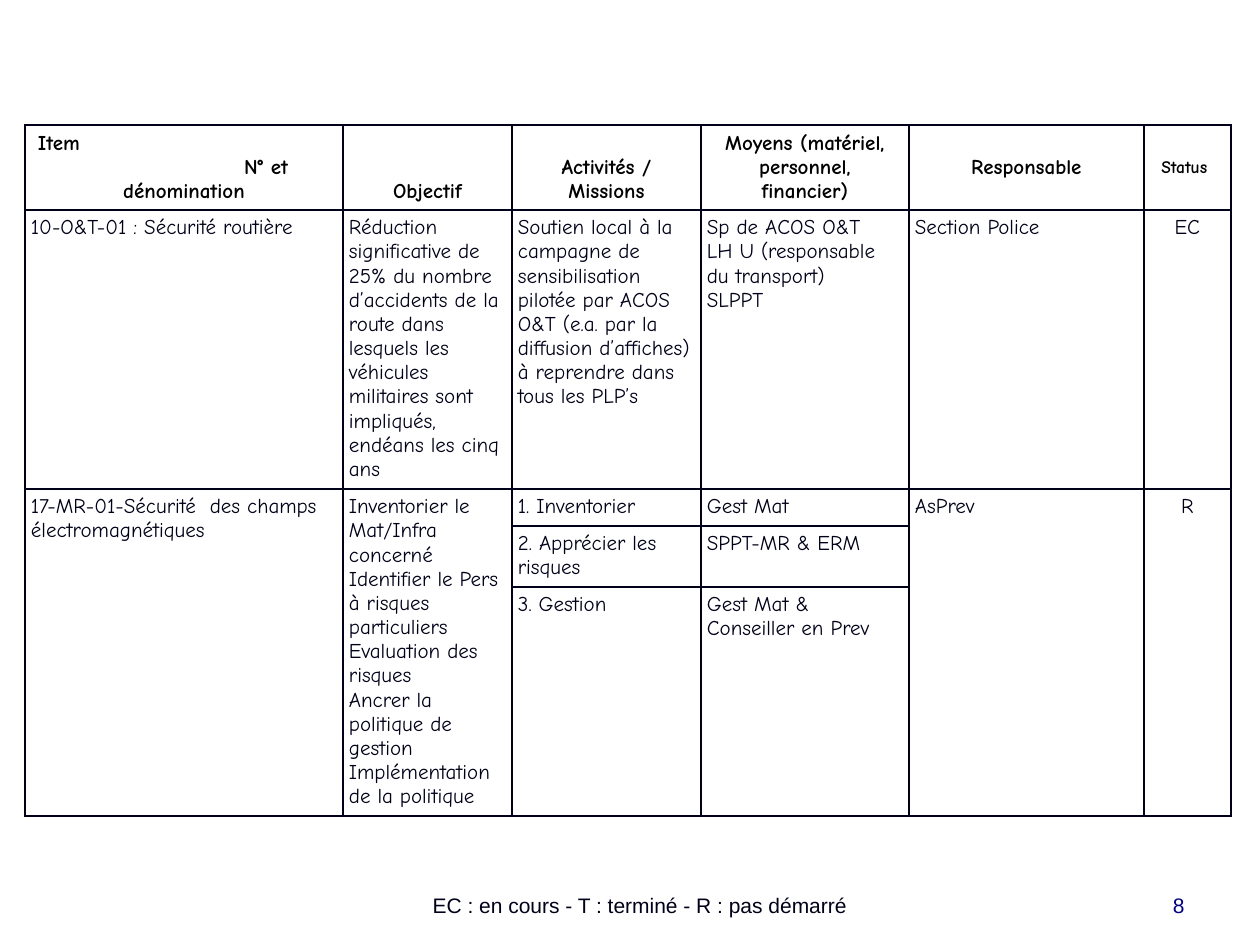
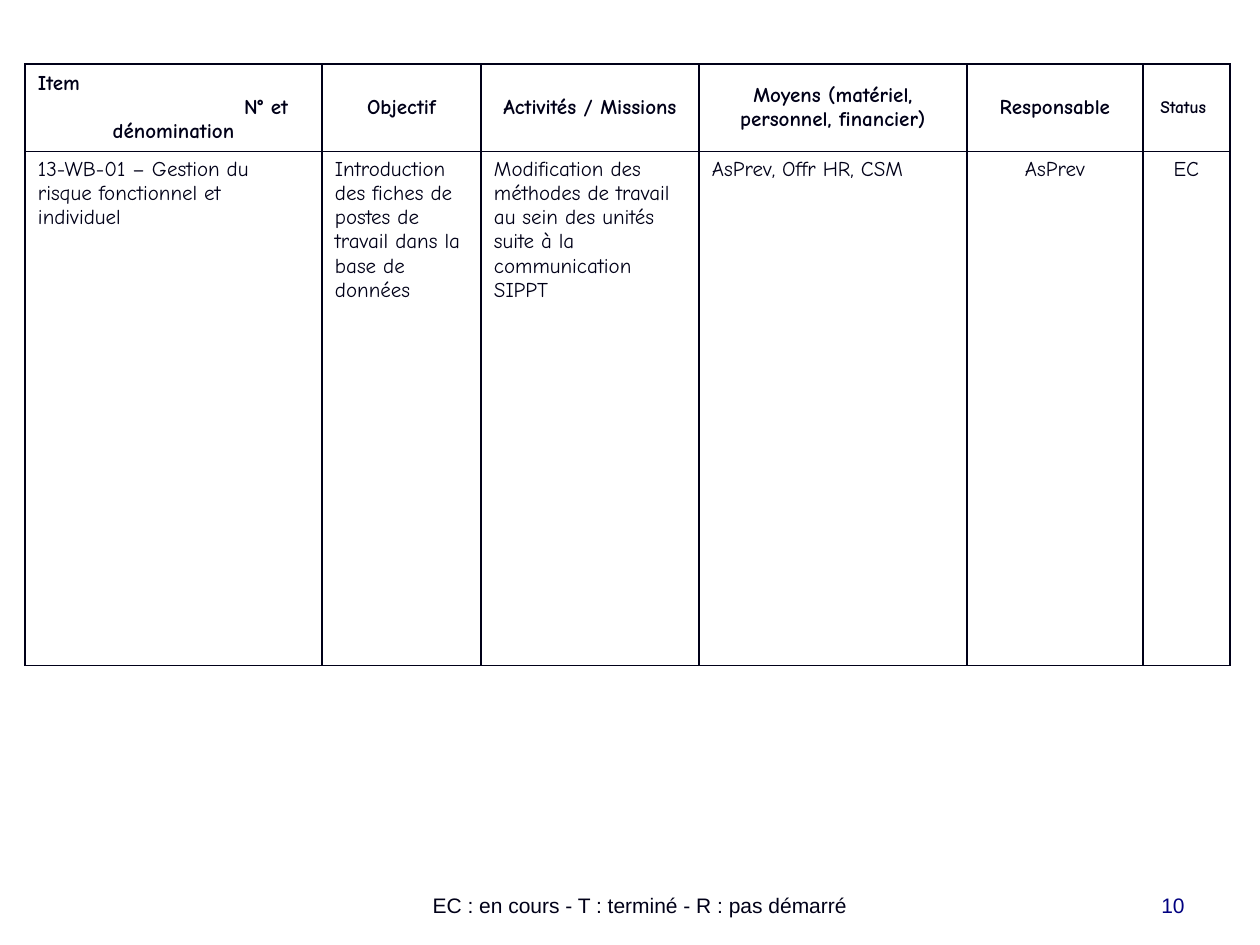
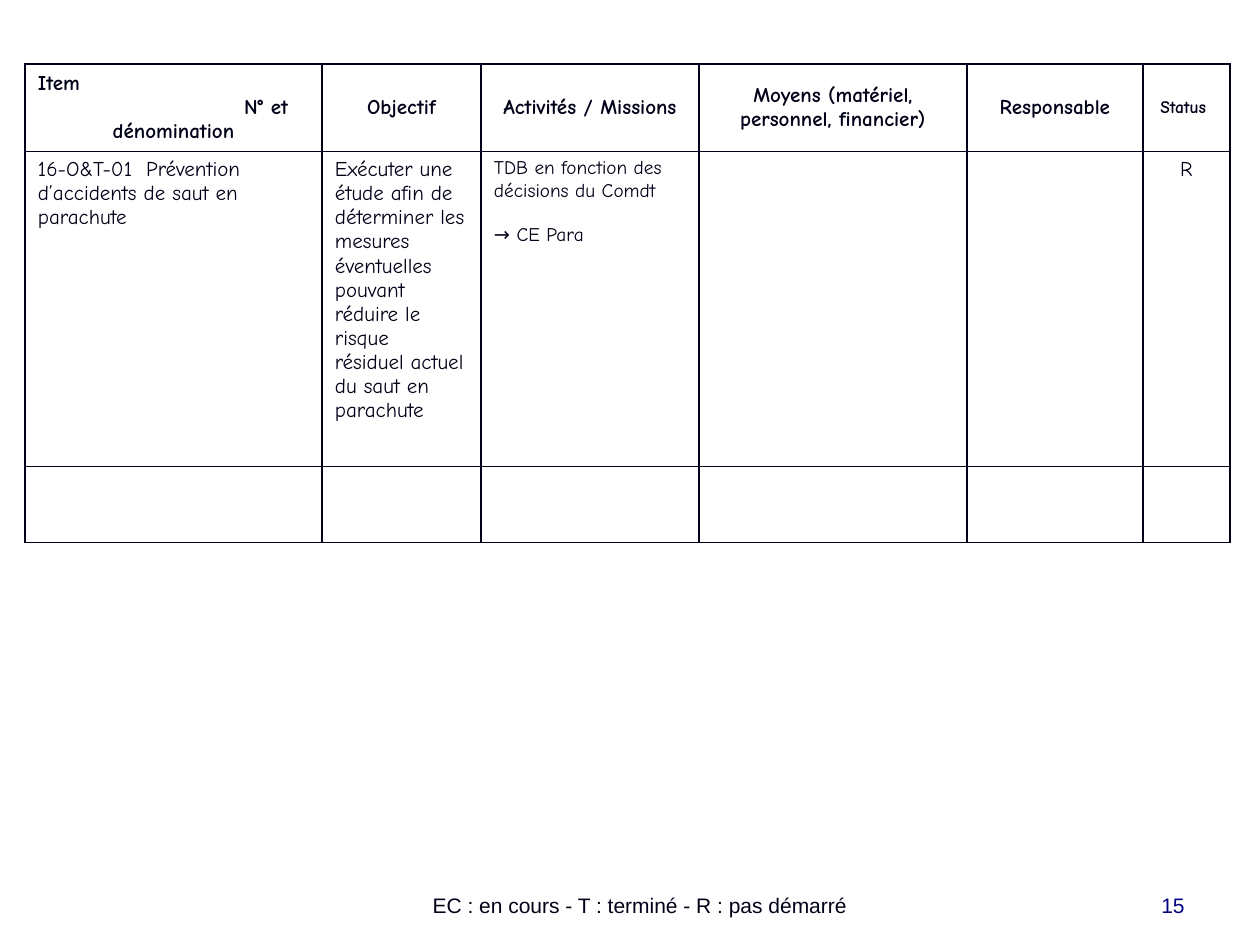
from lxml.etree import SubElement
from pptx import Presentation
from pptx.dml.color import RGBColor
from pptx.enum.text import MSO_ANCHOR as Anchor, PP_ALIGN as Align
from pptx.oxml.ns import qn
from pptx.util import Emu, Pt

INK = "000018"
BLACK = "000000"
NAVY = "000080"
TABLE_FONT = "Comic Neue"
FOOTER_FONT = "Arial"
LEGEND = "EC : en cours - T : terminé - R : pas démarré"
TITLES = ["Item\nN° et\ndénomination", "Objectif", "Activités / Missions",
          "Moyens (matériel, personnel, financier)", "Responsable", "Status "]
WIDE_COLUMNS = [297, 159, 218, 268, 176, 87]
HEADER_HEIGHT = 85


def px(length):
    return Emu(round(length * 914400 / 126))


def color(value):
    return RGBColor.from_string(value)


def style_paragraph(paragraph, font, size, ink, align, bold=False):
    paragraph.alignment = align
    paragraph.font.name = font
    paragraph.font.size = Pt(size)
    paragraph.font.color.rgb = color(ink)
    paragraph.font.bold = bold


def add_label(slide, box, text, ink, align):
    shape = slide.shapes.add_textbox(*map(px, box))
    frame = shape.text_frame
    frame.word_wrap = True
    frame.vertical_anchor = Anchor.BOTTOM
    frame.text = text
    style_paragraph(frame.paragraphs[0], FOOTER_FONT, 12, ink, align)


def add_footer(slide, number):
    add_label(slide, (293, 861, 694, 63), LEGEND, INK, Align.CENTER)
    add_label(slide, (903, 861, 294, 63), str(number), NAVY, Align.RIGHT)


def outline_cell(cell):
    properties = cell._tc.get_or_add_tcPr()
    for side in ("lnL", "lnR", "lnT", "lnB"):
        line = SubElement(properties, qn(f"a:{side}"), w=str(Pt(1)))
        fill = SubElement(line, qn("a:solidFill"))
        SubElement(fill, qn("a:srgbClr"), val=INK)
    cell.fill.background()


def write_cell(cell, text, inset, align=Align.LEFT, size=12, ink=INK, bold=False):
    cell.margin_left = cell.margin_right = px(inset)
    cell.margin_top = cell.margin_bottom = px(6)
    cell.text_frame.text = text
    for paragraph in cell.text_frame.paragraphs:
        style_paragraph(paragraph, TABLE_FONT, size, ink, align, bold)


def write_header(table, ink, anchors):
    for column, (title, anchor) in enumerate(zip(TITLES, anchors)):
        cell = table.cell(0, column)
        size = 10 if column == 5 else 12
        write_cell(cell, title, 13, Align.CENTER, size, ink, True)
        cell.vertical_anchor = anchor
    table.cell(0, 5)._tc.get_or_add_tcPr().set("vert", "eaVert")
    item, number, _ = table.cell(0, 0).text_frame.paragraphs
    item.alignment = number.alignment = Align.LEFT
    number._p.get_or_add_pPr().set("marL", str(px(206)))


def add_plan(slide, top, columns, heights, rows, inset, centered=(5,),
             header_ink=INK, anchors=(Anchor.MIDDLE,) * 6):
    heights = [HEADER_HEIGHT, *heights]
    frame = slide.shapes.add_table(len(heights), len(columns), px(25), px(top),
                                   px(sum(columns)), px(sum(heights)))
    table = frame.table
    table.first_row = table.horz_banding = False
    for column, width in zip(table.columns, columns):
        column.width = px(width)
    for row, height in zip(table.rows, heights):
        row.height = px(height)
    for cell in table.iter_cells():
        outline_cell(cell)
    write_header(table, header_ink, anchors)
    for row, texts in enumerate(rows, 1):
        for column, text in enumerate(texts):
            if text:
                align = Align.CENTER if column in centered else Align.LEFT
                write_cell(table.cell(row, column), text, inset, align)
    return table


def build_safety_slide(slide):
    rows = [
        ["10-O&T-01 : Sécurité routière",
         "Réduction significative de 25% du nombre d’accidents de la route dans lesquels "
         "les véhicules militaires sont impliqués, endéans les cinq ans",
         "Soutien local à la campagne de sensibilisation pilotée par ACOS O&T "
         "(e.a. par la diffusion d’affiches) à reprendre dans tous les PLP’s",
         "Sp de ACOS O&T\nLH U (responsable du transport)\nSLPPT",
         "Section Police", "EC"],
        ["17-MR-01-Sécurité  des champs électromagnétiques",
         "Inventorier le Mat/Infra concerné\nIdentifier le Pers à risques particuliers\n"
         "Evaluation des risques\nAncrer la politique de gestion\n"
         "Implémentation de la politique",
         "1. Inventorier", "Gest Mat", "AsPrev", "R"],
        ["", "", "2. Apprécier les risques", "SPPT-MR & ERM", "", ""],
        ["", "", "3. Gestion", "Gest Mat & Conseiller en Prev", "", ""],
    ]
    anchors = [Anchor.MIDDLE, *[Anchor.BOTTOM] * 3, *[Anchor.MIDDLE] * 2]
    table = add_plan(slide, 125, [318, 169, 189, 208, 235, 87], [279, 37, 61, 229],
                     rows, 6, header_ink=BLACK, anchors=anchors)
    for column in (0, 1, 4, 5):
        table.cell(2, column).merge(table.cell(4, column))


def build_risk_slide(slide):
    rows = [["13-WB-01 – Gestion du risque fonctionnel et individuel",
             "Introduction des fiches de postes de travail dans la base de données",
             "Modification des méthodes de travail au sein des unités suite à la "
             "communication SIPPT",
             "AsPrev, Offr HR, CSM", "AsPrev", "EC"]]
    add_plan(slide, 64, WIDE_COLUMNS, [514], rows, 13, centered=(4, 5))


def build_parachute_slide(slide):
    rows = [["16-O&T-01  Prévention d’accidents de saut en parachute",
             "Exécuter une étude afin de déterminer les mesures éventuelles pouvant "
             "réduire le risque\nrésiduel actuel du saut en parachute",
             "", "", "", "R"]]
    table = add_plan(slide, 64, WIDE_COLUMNS, [315, 76], rows, 13)
    activities = table.cell(1, 2)
    write_cell(activities, "TDB en fonction des décisions du Comdt\n→ CE Para", 13, size=11)
    activities.text_frame.paragraphs[1].space_before = Pt(12.6)


def main():
    presentation = Presentation()
    presentation.slide_width = px(1260)
    presentation.slide_height = px(945)
    pages = [(8, build_safety_slide), (10, build_risk_slide), (15, build_parachute_slide)]
    for number, build in pages:
        slide = presentation.slides.add_slide(presentation.slide_layouts[6])
        build(slide)
        add_footer(slide, number)
    presentation.save("out.pptx")


if __name__ == "__main__":
    main()
